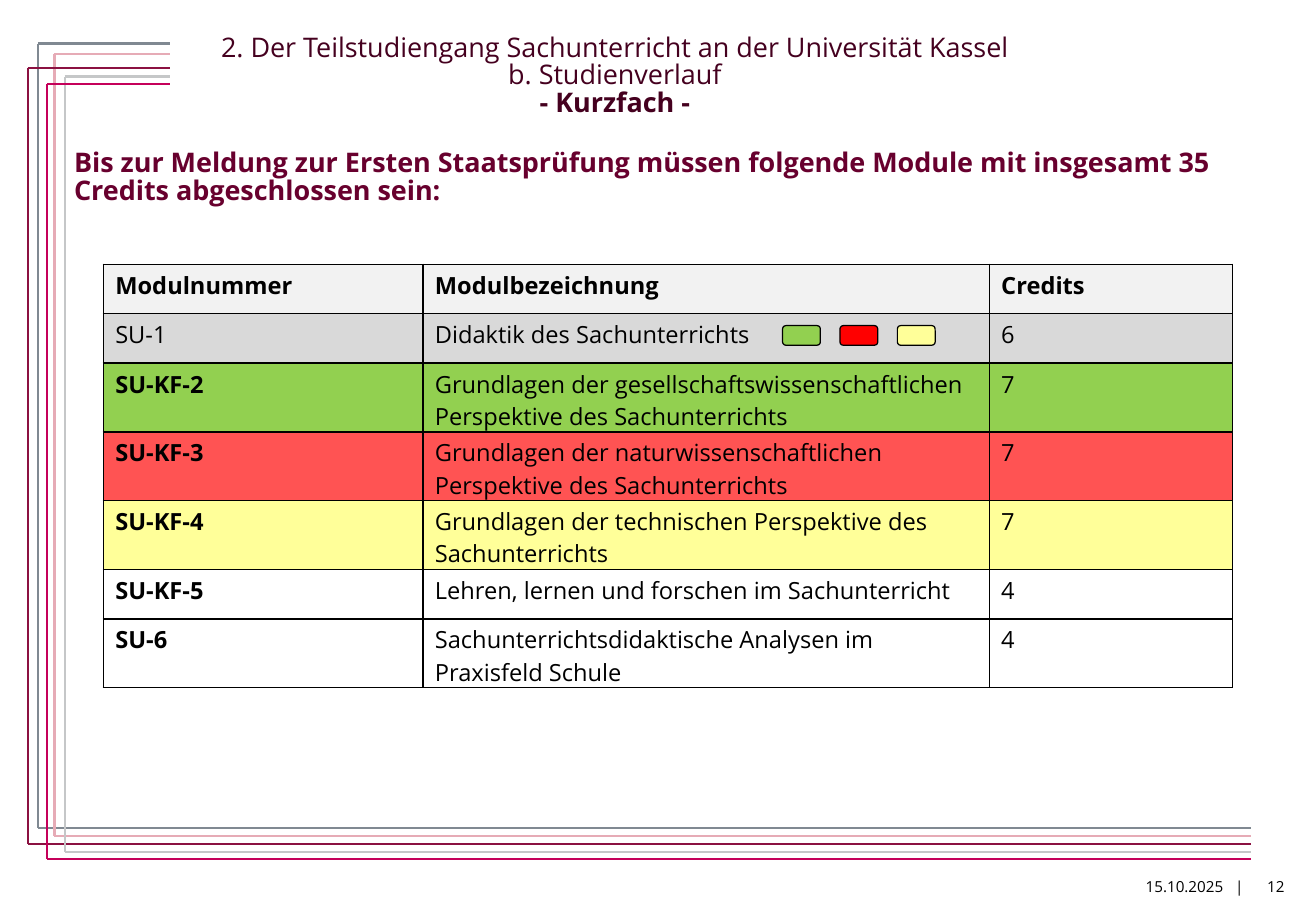
from dataclasses import dataclass

from lxml import etree
from pptx import Presentation
from pptx.dml.color import RGBColor
from pptx.enum.shapes import MSO_CONNECTOR, MSO_SHAPE
from pptx.enum.text import MSO_ANCHOR, PP_ALIGN
from pptx.oxml.ns import qn
from pptx.util import Cm, Pt

STRAIGHT = MSO_CONNECTOR.STRAIGHT
ROUNDED = MSO_SHAPE.ROUNDED_RECTANGLE
TOP, BOTTOM = MSO_ANCHOR.TOP, MSO_ANCHOR.BOTTOM
LEFT, CENTER = PP_ALIGN.LEFT, PP_ALIGN.CENTER

FONT = "Open Sans"
COLORS = {
    "black": "000000", "title": "45001F", "lead": "68002E",
    "slate": "808992", "rose": "E6ABB6", "wine": "8B1141",
    "silver": "C5C7C8", "magenta": "C5005A",
    "header": "F2F2F2", "shared": "D9D9D9", "green": "92D050",
    "coral": "FF5353", "red": "FF0000", "yellow": "FFFF99",
}
FRAME_TOP_END, FRAME_BOTTOM_END = 3.56, 26.16
COLUMN_WIDTHS = (6.68, 11.84, 5.08)
ONE_LINE, TWO_LINES = 1.03, 1.44


@dataclass
class Frame:
    color: str
    left: float
    top: float
    bottom: float


@dataclass
class Module:
    number: str
    title: str
    credits: str
    fill: str = ""
    height: float = ONE_LINE
    bold: tuple = (True, False, False)


FRAMES = [
    Frame("slate", 0.79, 0.91, 17.32),
    Frame("rose", 1.14, 1.12, 17.48),
    Frame("wine", 0.58, 1.42, 17.65),
    Frame("silver", 1.35, 1.6, 17.81),
    Frame("magenta", 0.99, 1.75, 17.96),
]
MODULES = [
    Module("Modulnummer", "Modulbezeichnung", "Credits", "header",
           bold=(True, True, True)),
    Module("SU-1", "Didaktik des Sachunterrichts", "6", "shared",
           bold=(False, False, False)),
    Module("SU-KF-2", "Grundlagen der gesellschaftswissenschaftlichen "
           "Perspektive des Sachunterrichts", "7", "green", TWO_LINES),
    Module("SU-KF-3", "Grundlagen der naturwissenschaftlichen "
           "Perspektive des Sachunterrichts", "7", "coral", TWO_LINES),
    Module("SU-KF-4", "Grundlagen der technischen Perspektive des "
           "Sachunterrichts", "7", "yellow", TWO_LINES),
    Module("SU-KF-5", "Lehren, lernen und forschen im Sachunterricht", "4"),
    Module("SU-6", "Sachunterrichtsdidaktische Analysen im "
           "Praxisfeld Schule", "4", height=TWO_LINES),
]


def rgb(name: str) -> RGBColor:
    return RGBColor.from_string(COLORS[name])


def write(paragraph, text: str, *, size: float, color: str = "black",
          bold: bool = False) -> None:
    """Append text to the paragraph; each newline becomes a line break."""
    for index, line in enumerate(text.split("\n")):
        if index:
            paragraph.add_line_break()
        if line:
            run = paragraph.add_run()
            run.text = line
            run.font.name = FONT
            run.font.size = Pt(size)
            run.font.bold = bold
            run.font.color.rgb = rgb(color)


def add_text(slide, box: tuple, text: str, *, align=LEFT, anchor=TOP,
             spacing: float = 1.0, wrap: bool = True,
             margin_y: float = 0.13, **style):
    """Add a text box and return its paragraph."""
    frame = slide.shapes.add_textbox(*map(Cm, box)).text_frame
    frame.word_wrap = wrap
    frame.vertical_anchor = anchor
    frame.margin_left = frame.margin_right = Cm(0.25)
    frame.margin_top = frame.margin_bottom = Cm(margin_y)
    paragraph = frame.paragraphs[0]
    paragraph.alignment = align
    paragraph.line_spacing = spacing
    write(paragraph, text, **style)
    return paragraph


def add_line(slide, start: tuple, end: tuple, color: str) -> None:
    line = slide.shapes.add_connector(STRAIGHT, *map(Cm, start + end))
    line.line.color.rgb = rgb(color)
    line.line.width = Pt(1.25)
    etree.SubElement(line._element.spPr, qn("a:effectLst"))


def add_frame(slide, frame: Frame) -> None:
    top_corner = (frame.left, frame.top)
    bottom_corner = (frame.left, frame.bottom)
    add_line(slide, top_corner, (FRAME_TOP_END, frame.top), frame.color)
    add_line(slide, top_corner, bottom_corner, frame.color)
    add_line(slide, bottom_corner, (FRAME_BOTTOM_END, frame.bottom), frame.color)


def set_borders(cell) -> None:
    properties = cell._tc.get_or_add_tcPr()
    for side in ("a:lnL", "a:lnR", "a:lnT", "a:lnB"):
        border = etree.SubElement(properties, qn(side), w=str(Pt(1)))
        fill = etree.SubElement(border, qn("a:solidFill"))
        etree.SubElement(fill, qn("a:srgbClr"), val=COLORS["black"])


def add_module_table(slide) -> None:
    height = sum(module.height for module in MODULES)
    table = slide.shapes.add_table(
        len(MODULES), len(COLUMN_WIDTHS), Cm(2.16), Cm(5.53),
        Cm(sum(COLUMN_WIDTHS)), Cm(height)).table
    table.first_row = table.horz_banding = False
    for column, width in zip(table.columns, COLUMN_WIDTHS):
        column.width = Cm(width)
    for row, module in zip(table.rows, MODULES):
        row.height = Cm(module.height)
        entries = (module.number, module.title, module.credits)
        for cell, entry, bold in zip(row.cells, entries, module.bold):
            set_borders(cell)
            if module.fill:
                cell.fill.solid()
                cell.fill.fore_color.rgb = rgb(module.fill)
            else:
                cell.fill.background()
            cell.margin_left = cell.margin_right = Cm(0.25)
            cell.margin_top, cell.margin_bottom = Cm(0.1), Cm(0)
            write(cell.text_frame.paragraphs[0], entry, size=14, bold=bold)


def add_perspective_marker(slide, left: float, color: str) -> None:
    marker = slide.shapes.add_shape(ROUNDED, Cm(left), Cm(6.81), Cm(0.79), Cm(0.41))
    marker.shadow.inherit = False
    marker.fill.solid()
    marker.fill.fore_color.rgb = rgb(color)
    marker.line.color.rgb = rgb("black")
    marker.line.width = Pt(0.75)


def main() -> None:
    deck = Presentation()
    deck.slide_width, deck.slide_height = Cm(27.51), Cm(19.05)
    slide = deck.slides.add_slide(deck.slide_layouts[6])

    for frame in FRAMES:
        add_frame(slide, frame)
    add_text(slide, (23.7, 18.26, 2.62, 0.46), "15.10.2025   |", size=9,
             anchor=BOTTOM, wrap=False, margin_y=0)
    title = add_text(
        slide, (3.56, 0.61, 18.59, 2.39),
        "2. Der Teilstudiengang Sachunterricht an der Universität Kassel\n"
        "b. Studienverlauf\n", size=16, color="title", align=CENTER, spacing=0.85)
    write(title, "- Kurzfach -", size=16, color="title", bold=True)
    add_text(slide, (26.24, 18.21, 1.24, 0.51), "12", size=9)
    add_text(slide, (1.3, 3, 26.14, 1.63),
             "Bis zur Meldung zur Ersten Staatsprüfung müssen folgende Module "
             "mit insgesamt 35 Credits abgeschlossen sein:",
             size=16, color="lead", bold=True, spacing=0.87)
    add_module_table(slide)
    for index, color in enumerate(("green", "red", "yellow")):
        add_perspective_marker(slide, 16.36 + 1.2 * index, color)

    deck.save("out.pptx")


if __name__ == "__main__":
    main()
